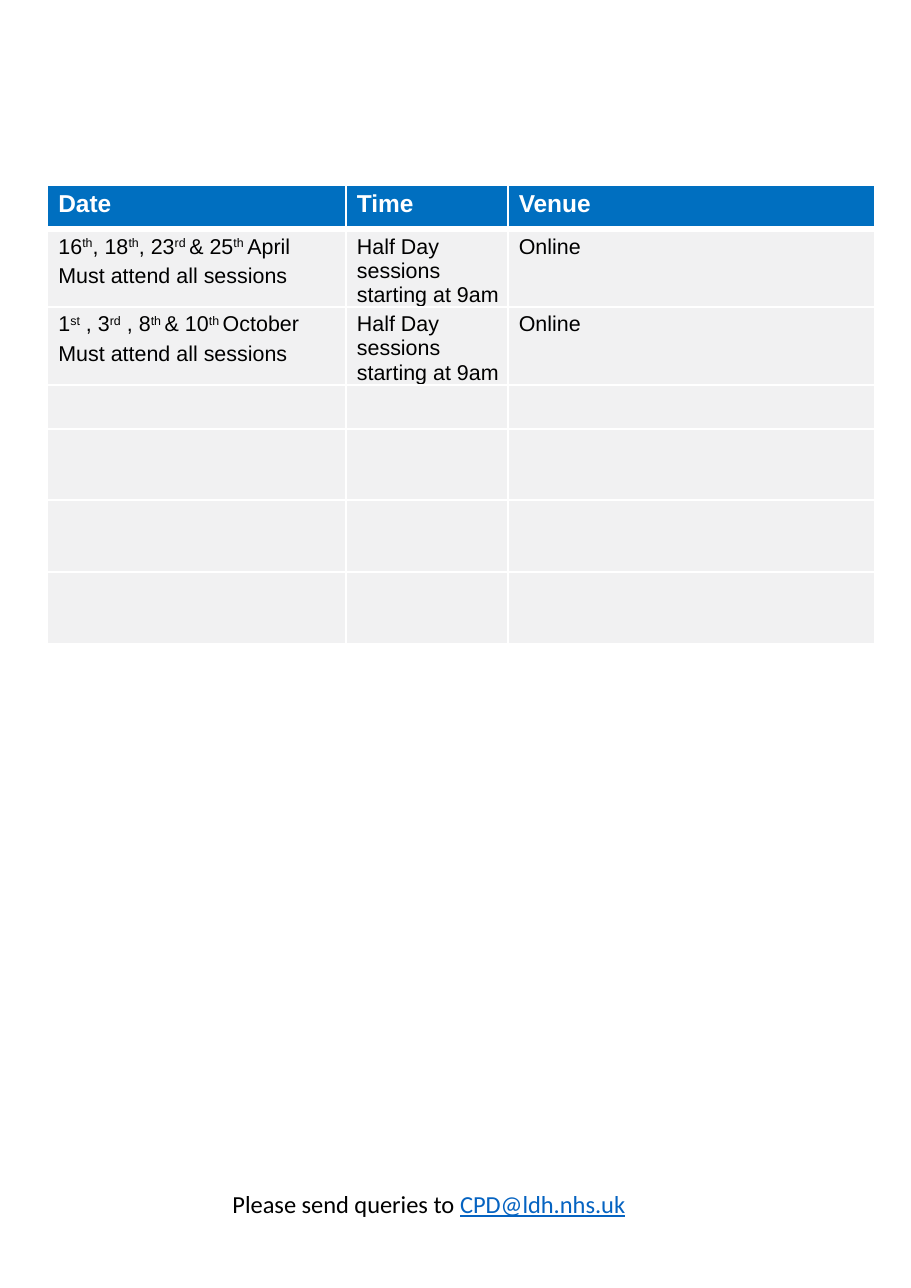
from dataclasses import dataclass

from lxml import etree
from pptx import Presentation, util as u
from pptx.dml.color import RGBColor
from pptx.enum import text
from pptx.oxml import ns

WHITE = RGBColor(0xFF, 0xFF, 0xFF)
BLACK = RGBColor(0, 0, 0)
HEADER_BLUE = RGBColor(0x00, 0x6F, 0xC0)
ROW_GREY = RGBColor(0xF1, 0xF1, 0xF2)
LINK_BLUE = RGBColor(0x05, 0x63, 0xC1)


@dataclass(frozen=True)
class RowStyle:
    fill: RGBColor
    color: RGBColor
    size: int
    bold: bool


@dataclass(frozen=True)
class Row:
    height: float
    cells: tuple[str, str, str] = ("", "", "")


HEADER = RowStyle(HEADER_BLUE, WHITE, 16, True)
BODY = RowStyle(ROW_GREY, BLACK, 14, False)

# Text between carets is superscript
HALF_DAY = "Half Day sessions starting at 9am"
ROWS = [
    Row(0.4, ("Date", "Time", "Venue")),
    Row(0.7, ("16^th^, 18^th^, 23^rd ^& 25^th ^April\nMust attend all sessions",
              HALF_DAY, "Online")),
    Row(0.7, ("1^st^ , 3^rd^ , 8^th ^& 10^th ^October\nMust attend all sessions",
              HALF_DAY, "Online")),
    Row(0.4),
    Row(0.65),
    Row(0.65),
    Row(0.65),
]
COLUMN_WIDTHS = (2.71, 1.47, 3.33)


def set_borders(cell, top: float, bottom: float) -> None:
    tc_pr = cell._tc.get_or_add_tcPr()
    sides = (("lnL", 1.5), ("lnR", 1.5), ("lnT", top), ("lnB", bottom))
    for index, (tag, points) in enumerate(sides):
        line = etree.Element(ns.qn(f"a:{tag}"), w=str(int(u.Pt(points))))
        fill = etree.SubElement(line, ns.qn("a:solidFill"))
        etree.SubElement(fill, ns.qn("a:srgbClr"), val=str(WHITE))
        tc_pr.insert(index, line)


def fill_cell(cell, content: str, style: RowStyle) -> None:
    cell.fill.solid()
    cell.fill.fore_color.rgb = style.fill
    cell.margin_left = cell.margin_right = cell.margin_bottom = 0
    cell.margin_top = u.Inches(0.05)
    for index, line in enumerate(content.split("\n")):
        frame = cell.text_frame
        paragraph = frame.add_paragraph() if index else frame.paragraphs[0]
        if index:
            paragraph.space_before = u.Pt(3.5)
        paragraph._p.get_or_add_pPr().set("marL", str(int(u.Inches(0.1))))
        font = paragraph.font
        font.name, font.size, font.bold = "Arial", u.Pt(style.size), style.bold
        font.color.rgb = style.color
        for part, piece in enumerate(line.split("^")):
            if piece:
                run = paragraph.add_run()
                run.text = piece
                if part % 2:
                    run._r.get_or_add_rPr().set("baseline", "30000")


def add_schedule(slide) -> None:
    frame = slide.shapes.add_table(
        len(ROWS), len(COLUMN_WIDTHS), u.Inches(0.43), u.Inches(1.68),
        u.Inches(sum(COLUMN_WIDTHS)), u.Inches(sum(row.height for row in ROWS)))
    schedule = frame.table
    for column, width in zip(schedule.columns, COLUMN_WIDTHS):
        column.width = u.Inches(width)
    for r, row in enumerate(ROWS):
        schedule.rows[r].height = u.Inches(row.height)
        for c, content in enumerate(row.cells):
            cell = schedule.cell(r, c)
            fill_cell(cell, content, BODY if r else HEADER)
            set_borders(cell, top=4.5 if r == 1 else 1.5,
                        bottom=4.5 if r == 0 else 1.5)


def add_contact(slide) -> None:
    contact = slide.shapes.add_textbox(
        u.Inches(0.43), u.Inches(10.74), u.Inches(7.03), u.Inches(0.37))
    frame = contact.text_frame
    frame.word_wrap = True
    frame.margin_right = u.Inches(0.2)
    paragraph = frame.paragraphs[0]
    paragraph.alignment = text.PP_ALIGN.CENTER
    paragraph.font.name, paragraph.font.size = "Calibri", u.Pt(16)
    request = paragraph.add_run()
    request.text = "Please send queries to "
    request.font.color.rgb = BLACK
    address = paragraph.add_run()
    address.text = "CPD@ldh.nhs.uk"
    address.font.color.rgb = LINK_BLUE
    address.font.underline = True


def main() -> None:
    deck = Presentation()
    deck.slide_width, deck.slide_height = u.Inches(8.27), u.Inches(11.69)
    slide = deck.slides.add_slide(deck.slide_layouts[6])
    # Course dates
    add_schedule(slide)
    # Contact line
    add_contact(slide)
    deck.save("out.pptx")


if __name__ == "__main__":
    main()
